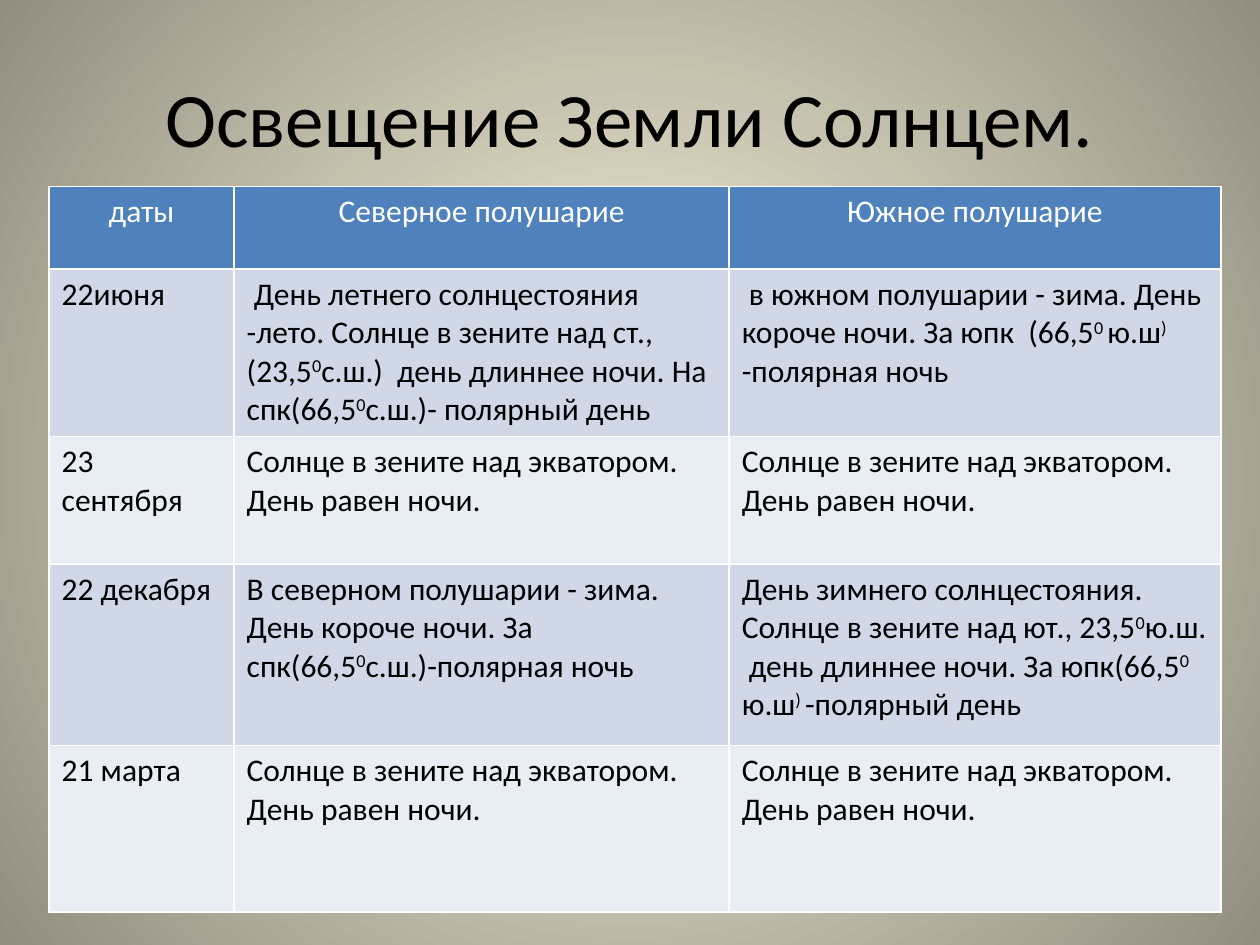
from lxml import etree
from pptx import Presentation
from pptx.dml.color import RGBColor
from pptx.enum.text import MSO_ANCHOR, PP_ALIGN
from pptx.oxml import parse_xml
from pptx.oxml.ns import nsdecls, qn
from pptx.util import Cm, Pt

CENTER, LEFT = PP_ALIGN.CENTER, PP_ALIGN.LEFT
MIDDLE = MSO_ANCHOR.MIDDLE

FONT = "Calibri"
BLACK, WHITE = "000000", "FFFFFF"
HEADER_FILL = "4F81BD"
BAND_FILLS = ("E9EDF4", "D0D8E8")
GRADIENT = ("FCF7DD", "918E81")

COLUMN_WIDTHS = (3.73, 9.98, 9.91)
ROW_HEIGHTS = (1.66, 3.38, 2.57, 3.66, 3.35)

# A caret switches superscript on and off; a line break starts a paragraph.
EQUINOX = "Солнце в зените над экватором.\nДень равен ночи."
ROWS = (
    ("даты", "Северное полушарие", "Южное полушарие"),
    (
        "22июня",
        " День летнего солнцестояния -лето. Солнце в зените над ст., "
        "(23,5^0^с.ш.)  день длиннее ночи. На спк(66,5^0^с.ш.)- полярный день",
        " в южном полушарии - зима. День короче ночи. "
        "За юпк  (66,5^0 ^ю.ш^) ^-полярная ночь",
    ),
    ("23 сентября", EQUINOX, EQUINOX),
    (
        "22 декабря",
        "В северном полушарии - зима.\n"
        "День короче ночи. За спк(66,5^0^с.ш.)-полярная ночь",
        "День зимнего солнцестояния.\n"
        "Солнце в зените над ют., 23,5^0^ю.ш.  день длиннее ночи. "
        "За юпк(66,5^0 ^ю.ш^) ^-полярный день",
    ),
    ("21 марта", EQUINOX, EQUINOX),
)


def rgb(value):
    return RGBColor.from_string(value)


def format_font(font, size, color):
    for name, value in {"name": FONT, "size": Pt(size), "bold": False}.items():
        setattr(font, name, value)
    font.color.rgb = rgb(color)


def set_background(slide):
    """Fill the background with a gradient that spreads from the centre."""
    fill = slide.background.fill
    fill.gradient()
    for stop, color, position in zip(fill.gradient_stops, GRADIENT, (0, 1)):
        stop.color.rgb = rgb(color)
        stop.position = position
    gradient = next(slide.element.iter(qn("a:gradFill")))
    gradient.replace(
        gradient.find(qn("a:lin")),
        parse_xml(
            f'<a:path {nsdecls("a")} path="circle">'
            '<a:fillToRect l="50000" t="50000" r="50000" b="50000"/></a:path>'
        ),
    )


def add_title(slide, text):
    title = slide.shapes.title
    box = {"left": 1.27, "top": 0.76, "width": 22.86, "height": 3.18}
    for name, value in box.items():
        setattr(title, name, Cm(value))
    frame = title.text_frame
    frame.text = text
    frame.vertical_anchor = MIDDLE
    paragraph = frame.paragraphs[0]
    paragraph.alignment = CENTER
    format_font(paragraph.runs[0].font, 44, BLACK)


def set_borders(cell):
    properties = cell._tc.get_or_add_tcPr()
    for index, side in enumerate("LRTB"):
        line = etree.Element(qn(f"a:ln{side}"), w=str(Pt(1)))
        fill = etree.SubElement(line, qn("a:solidFill"))
        etree.SubElement(fill, qn("a:srgbClr"), val=WHITE)
        properties.insert(index, line)


def write_cell(cell, text, color, alignment):
    frame = cell.text_frame
    for index, line in enumerate(text.split("\n")):
        paragraph = frame.add_paragraph() if index else frame.paragraphs[0]
        paragraph.alignment = alignment
        for part_index, part in enumerate(line.split("^")):
            run = paragraph.add_run()
            run.text = part
            format_font(run.font, 18, color)
            if part_index % 2:
                run.font._element.set("baseline", "30000")


def add_daylight_table(slide):
    table = slide.shapes.add_table(
        len(ROWS), len(COLUMN_WIDTHS), Cm(0.99), Cm(3.76),
        Cm(sum(COLUMN_WIDTHS)), Cm(sum(ROW_HEIGHTS)),
    ).table
    for column, width in zip(table.columns, COLUMN_WIDTHS):
        column.width = Cm(width)
    for row_index, (row, height, texts) in enumerate(
        zip(table.rows, ROW_HEIGHTS, ROWS)
    ):
        row.height = Cm(height)
        if row_index == 0:
            fill, color, alignment = HEADER_FILL, WHITE, CENTER
        else:
            fill, color, alignment = BAND_FILLS[row_index % 2], BLACK, LEFT
        for cell, text in zip(row.cells, texts):
            cell.fill.solid()
            cell.fill.fore_color.rgb = rgb(fill)
            set_borders(cell)
            write_cell(cell, text, color, alignment)


def main():
    presentation = Presentation()
    presentation.slide_width, presentation.slide_height = Cm(25.4), Cm(19.05)
    slide = presentation.slides.add_slide(presentation.slide_layouts[5])
    set_background(slide)
    add_title(slide, "Освещение Земли Солнцем.")
    add_daylight_table(slide)
    presentation.save("out.pptx")


if __name__ == "__main__":
    main()
